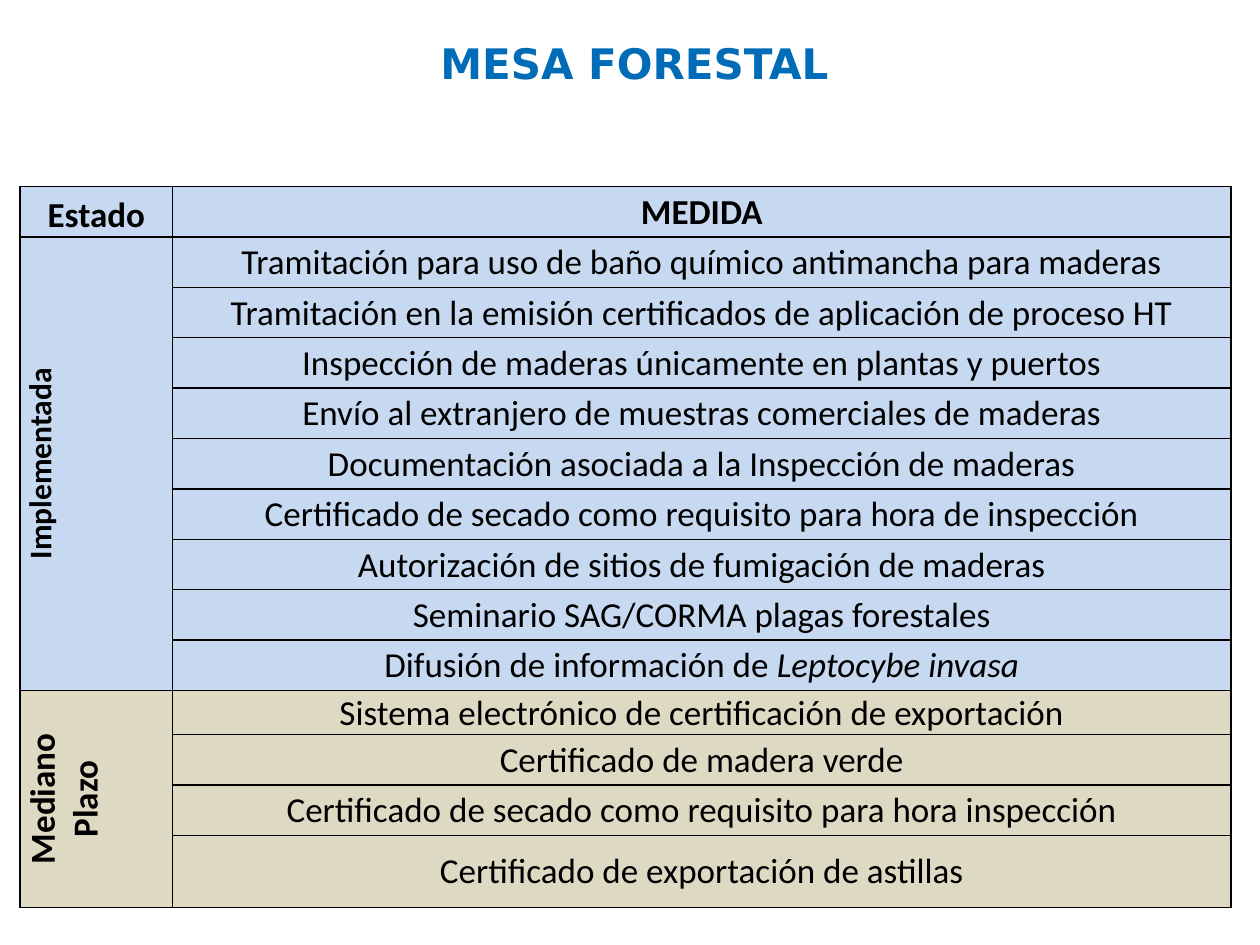
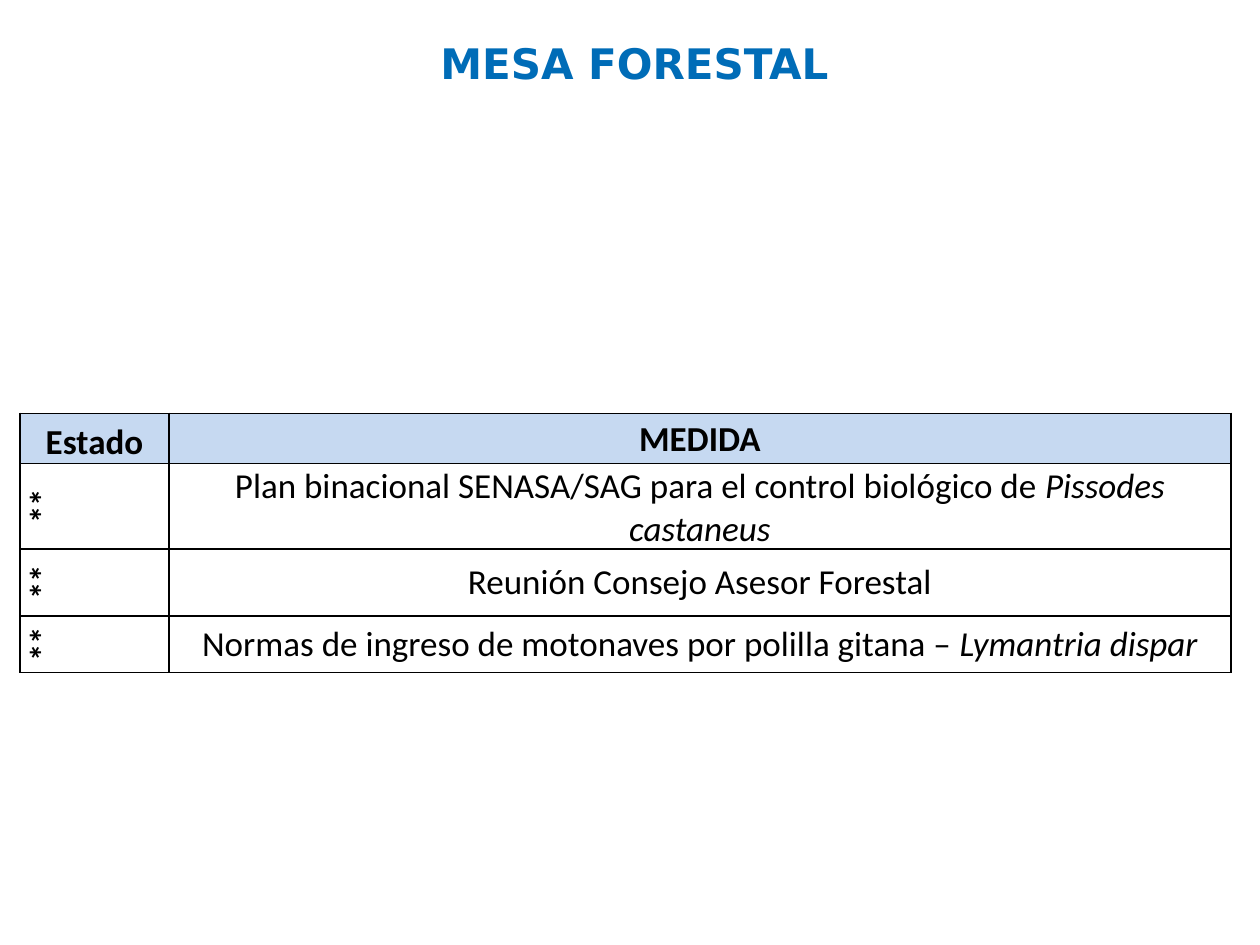
from lxml.etree import SubElement
from pptx import Presentation
from pptx.dml.color import RGBColor
from pptx.enum.text import MSO_ANCHOR, PP_ALIGN
from pptx.oxml.ns import qn
from pptx.util import Inches, Pt

TITLE_BLUE = RGBColor(0x00, 0x6C, 0xB7)
PALE_BLUE = RGBColor(0xC6, 0xD9, 0xF1)
SAND = RGBColor(0xDD, 0xD9, 0xC3)
WHITE = RGBColor(0xFF, 0xFF, 0xFF)
BLACK = RGBColor(0x00, 0x00, 0x00)
TABLE_LEFT, TABLE_WIDTH = 0.16, 9.61

IMPLEMENTED = [
    "Tramitación para uso de baño químico antimancha para maderas",
    "Tramitación en la emisión certificados de aplicación de proceso HT",
    "Inspección de maderas únicamente en plantas y puertos",
    "Envío al extranjero de muestras comerciales de maderas",
    "Documentación asociada a la Inspección de maderas",
    "Certificado de secado como requisito para hora de inspección",
    "Autorización de sitios de fumigación de maderas",
    "Seminario SAG/CORMA plagas forestales",
    ("Difusión de información de ", "Leptocybe invasa"),
]
MEDIUM_TERM = [
    "Sistema electrónico de certificación de exportación",
    "Certificado de madera verde",
    "Certificado de secado como requisito para hora inspección",
    "Certificado de exportación de astillas",
]
OTHER_MEASURES = [
    ("Plan binacional SENASA/SAG para el control biológico de ", "Pissodes castaneus"),
    "Reunión Consejo Asesor Forestal",
    ("Normas de ingreso de motonaves por polilla gitana – ", "Lymantria dispar"),
]


def write(frame, text, size=20, font="Calibri", color=BLACK, bold=False):
    """Write centred text; the second part of a pair is set in italics."""
    para = frame.paragraphs[0]
    para.alignment = PP_ALIGN.CENTER
    parts = (text,) if isinstance(text, str) else text
    for index, part in enumerate(parts):
        span = para.add_run()
        span.text = part
        span.font.size, span.font.name = Pt(size), font
        span.font.bold, span.font.italic = bold, index == 1
        span.font.color.rgb = color


def add_title(page, text, left=0.94, top=0.23, width=8.19, height=0.59):
    """Place the slide title."""
    box = page.shapes.add_textbox(*map(Inches, (left, top, width, height)))
    box.text_frame.word_wrap = True
    box.text_frame.margin_top = Inches(0.07)
    write(box.text_frame, text, size=24, font="DejaVu Sans", color=TITLE_BLUE, bold=True)


def style_cell(cell, fill):
    """Give a cell its margins, black borders and fill."""
    cell.margin_left = cell.margin_right = cell.margin_top = Inches(0.01)
    cell.margin_bottom = 0
    cell.vertical_anchor = MSO_ANCHOR.MIDDLE
    properties = cell._tc.get_or_add_tcPr()
    for side in ("lnL", "lnR", "lnT", "lnB"):
        line = SubElement(properties, qn(f"a:{side}"), w=str(Pt(1)))
        paint = SubElement(line, qn("a:solidFill"))
        SubElement(paint, qn("a:srgbClr"), val=str(BLACK))
    cell.fill.solid()
    cell.fill.fore_color.rgb = fill


def add_measures(page, top, state_width, heights, groups):
    """Draw the table of measures; each group is state, size, fill, measures."""
    table = page.shapes.add_table(
        len(heights), 2, Inches(TABLE_LEFT), Inches(top),
        Inches(TABLE_WIDTH), Inches(sum(heights))).table
    table.first_row = table.horz_banding = False
    table.columns[0].width = Inches(state_width)
    table.columns[1].width = Inches(TABLE_WIDTH - state_width)
    for row, height in zip(table.rows, heights):
        row.height = Inches(height)

    for column, heading in enumerate(("Estado", "MEDIDA")):
        cell = table.cell(0, column)
        style_cell(cell, PALE_BLUE)
        write(cell.text_frame, heading, bold=True)
    table.cell(0, 0).vertical_anchor = MSO_ANCHOR.BOTTOM

    first = 1
    for state, size, fill, measures in groups:
        for number, measure in enumerate(measures, first):
            style_cell(table.cell(number, 0), fill)
            style_cell(table.cell(number, 1), fill)
            write(table.cell(number, 1).text_frame, measure)
        last = first + len(measures) - 1
        state_cell = table.cell(first, 0)
        if last > first:
            state_cell.merge(table.cell(last, 0))
        state_cell._tc.get_or_add_tcPr().set("vert", "vert270")
        write(state_cell.text_frame, state, size=size, bold=True)
        first = last + 1


def add_page(deck, **measures):
    """Add a slide with the shared title and a table of measures."""
    page = deck.slides.add_slide(deck.slide_layouts[6])
    add_title(page, "MESA FORESTAL")
    add_measures(page, **measures)


def main():
    """Build and save the deck."""
    deck = Presentation()
    deck.slide_width, deck.slide_height = Inches(10), Inches(7.5)
    add_page(deck, top=1.48, state_width=1.21,
             heights=[0.4] * 10 + [0.35] + [0.4] * 3,
             groups=[("Implementada", 18, PALE_BLUE, IMPLEMENTED),
                     ("Mediano Plazo", 20, SAND, MEDIUM_TERM)])
    add_page(deck, top=3.28, state_width=1.18,
             heights=[0.4, 0.39, 0.53, 0.45],
             groups=[("**", 20, WHITE, [measure]) for measure in OTHER_MEASURES])
    deck.save("out.pptx")


if __name__ == "__main__":
    main()
